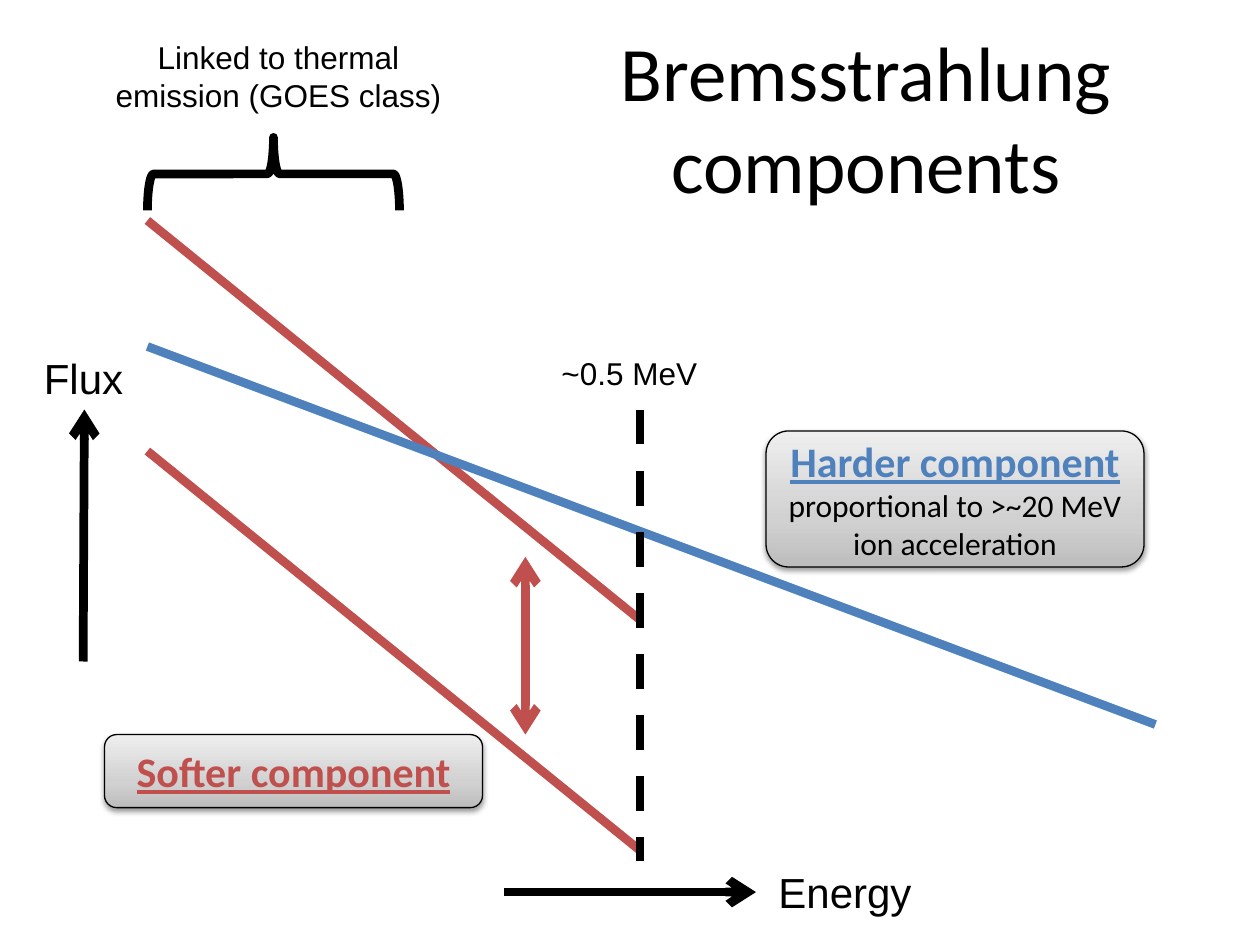
from lxml.etree import SubElement
from pptx import Presentation
from pptx.dml.color import RGBColor
from pptx.enum.dml import MSO_LINE
from pptx.enum.shapes import MSO_CONNECTOR, MSO_SHAPE
from pptx.enum.text import MSO_ANCHOR, MSO_AUTO_SIZE, PP_ALIGN
from pptx.oxml.ns import qn
from pptx.util import Inches, Pt

BLACK = RGBColor(0x00, 0x00, 0x00)
RED = RGBColor(0xC0, 0x50, 0x4D)
BLUE = RGBColor(0x4F, 0x81, 0xBD)
GRADIENT_STOPS = [
    (0, RGBColor(0xBD, 0xBD, 0xBD)),
    (35, RGBColor(0xD1, 0xD1, 0xD1)),
    (100, RGBColor(0xEE, 0xEE, 0xEE)),
]


def add_line(slide, start, end, color, arrow_ends=()):
    line = slide.shapes.add_connector(
        MSO_CONNECTOR.STRAIGHT, *(Inches(value) for value in start + end))
    line.line.color.rgb = color
    line.line.width = Pt(5)
    for arrow_end in arrow_ends:
        SubElement(line.line._get_or_add_ln(), qn(f"a:{arrow_end}"), type="arrow")
    SubElement(line._element.spPr, qn("a:effectLst"))
    return line


def format_paragraph(paragraph, text, font_name, size, color, alignment=PP_ALIGN.CENTER):
    paragraph.text = text
    paragraph.alignment = alignment
    paragraph.font.name = font_name
    paragraph.font.size = Pt(size)
    paragraph.font.color.rgb = color


presentation = Presentation()
presentation.slide_width = Inches(10)
presentation.slide_height = Inches(7.5)
slide = presentation.slides.add_slide(presentation.slide_layouts[5])

title = slide.shapes.title
title.left, title.top = Inches(4.25), Inches(0.3)
title.width, title.height = Inches(5.25), Inches(1.25)
title.text_frame.vertical_anchor = MSO_ANCHOR.MIDDLE
format_paragraph(title.text_frame.paragraphs[0], "Bremsstrahlung components",
                 "Calibri", 44, BLACK)

for top in (1.75, 3.58):
    add_line(slide, (1.17, top), (5.08, top + 3.17), RED)
add_line(slide, (1.17, 2.75), (9.17, 5.75), BLUE)
add_line(slide, (4.17, 4.42), (4.17, 5.83), RED, ("headEnd", "tailEnd"))
add_line(slide, (0.66, 5.25), (0.67, 3.25), BLACK, ("tailEnd",))
add_line(slide, (4, 7.08), (6, 7.08), BLACK, ("tailEnd",))

brace = slide.shapes.add_shape(
    MSO_SHAPE.LEFT_BRACE, Inches(1.88), Inches(0.38), Inches(0.58), Inches(2))
brace.rotation = 90
brace.fill.background()
brace.line.color.rgb = BLACK
brace.line.width = Pt(5)
brace.shadow.inherit = False

labels = [
    ("Flux", 0.25, 2.75, 0.83, 0.5, 24, PP_ALIGN.LEFT),
    ("Energy", 6.08, 6.83, 1.33, 0.5, 24, PP_ALIGN.LEFT),
    ("Linked to thermal emission (GOES class)", 0.75, 0.25, 2.92, 0.71, 18, PP_ALIGN.CENTER),
    ("~0.5 MeV", 4.33, 2.76, 1.33, 0.4, 18, PP_ALIGN.CENTER),
]
for text, left, top, width, height, size, alignment in labels:
    label = slide.shapes.add_textbox(
        Inches(left), Inches(top), Inches(width), Inches(height))
    label.text_frame.word_wrap = True
    label.text_frame.auto_size = MSO_AUTO_SIZE.SHAPE_TO_FIT_TEXT
    format_paragraph(label.text_frame.paragraphs[0], text, "Arial", size, BLACK, alignment)

threshold = add_line(slide, (5.08, 3.25), (5.08, 6.83), BLACK)
threshold.line.dash_style = MSO_LINE.DASH

components = [
    ("Harder component", "proportional to >~20 MeV ion acceleration", BLUE, 6.08, 3.42, 1.08),
    ("Softer component", None, RED, 0.83, 5.83, 0.58),
]
for heading, detail, color, left, top, height in components:
    box = slide.shapes.add_shape(
        MSO_SHAPE.ROUNDED_RECTANGLE, Inches(left), Inches(top), Inches(3), Inches(height))
    box.fill.gradient()
    box.fill.gradient_angle = 90
    stop_list = box._element.spPr.find(".//" + qn("a:gsLst"))
    stop_list.clear()
    for position, stop_color in GRADIENT_STOPS:
        stop = SubElement(stop_list, qn("a:gs"), pos=str(position * 1000))
        SubElement(stop, qn("a:srgbClr"), val=str(stop_color))
    box.line.color.rgb = BLACK
    box.line.width = Pt(0.75)

    box.shadow.inherit = False
    effects = box._element.spPr.find(qn("a:effectLst"))
    shadow = SubElement(effects, qn("a:outerShdw"), blurRad=str(Pt(3.1)),
                        dist=str(Pt(1.6)), dir="5400000", rotWithShape="0")
    shadow_color = SubElement(shadow, qn("a:srgbClr"), val=str(BLACK))
    SubElement(shadow_color, qn("a:alpha"), val="38000")

    text_frame = box.text_frame
    text_frame.word_wrap = True
    text_frame.vertical_anchor = MSO_ANCHOR.MIDDLE
    paragraph = text_frame.paragraphs[0]
    format_paragraph(paragraph, heading, "Calibri", 24, color)
    paragraph.font.bold = True
    paragraph.font.underline = True
    if detail:
        format_paragraph(text_frame.add_paragraph(), detail, "Calibri", 18, BLACK)

presentation.save("out.pptx")
